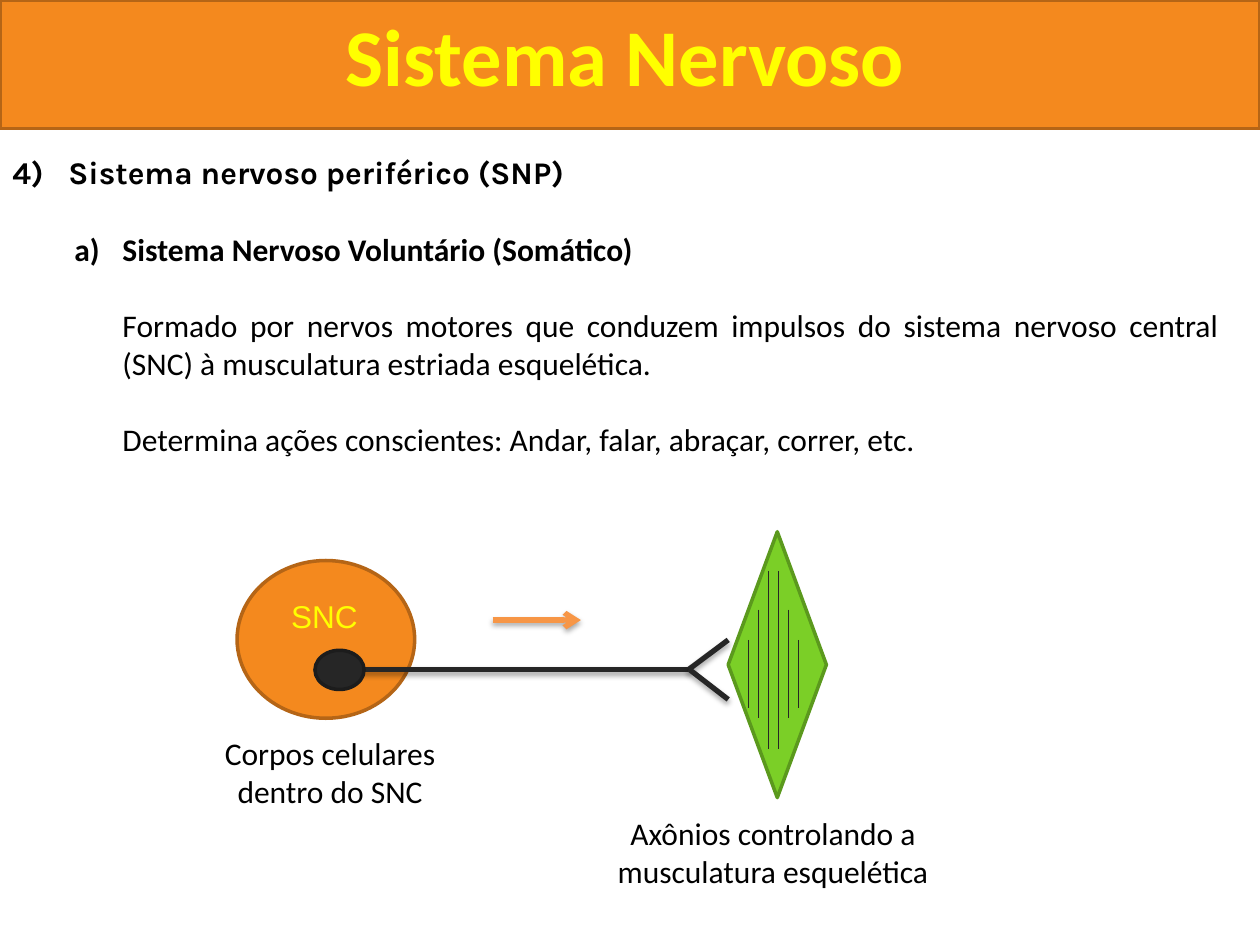
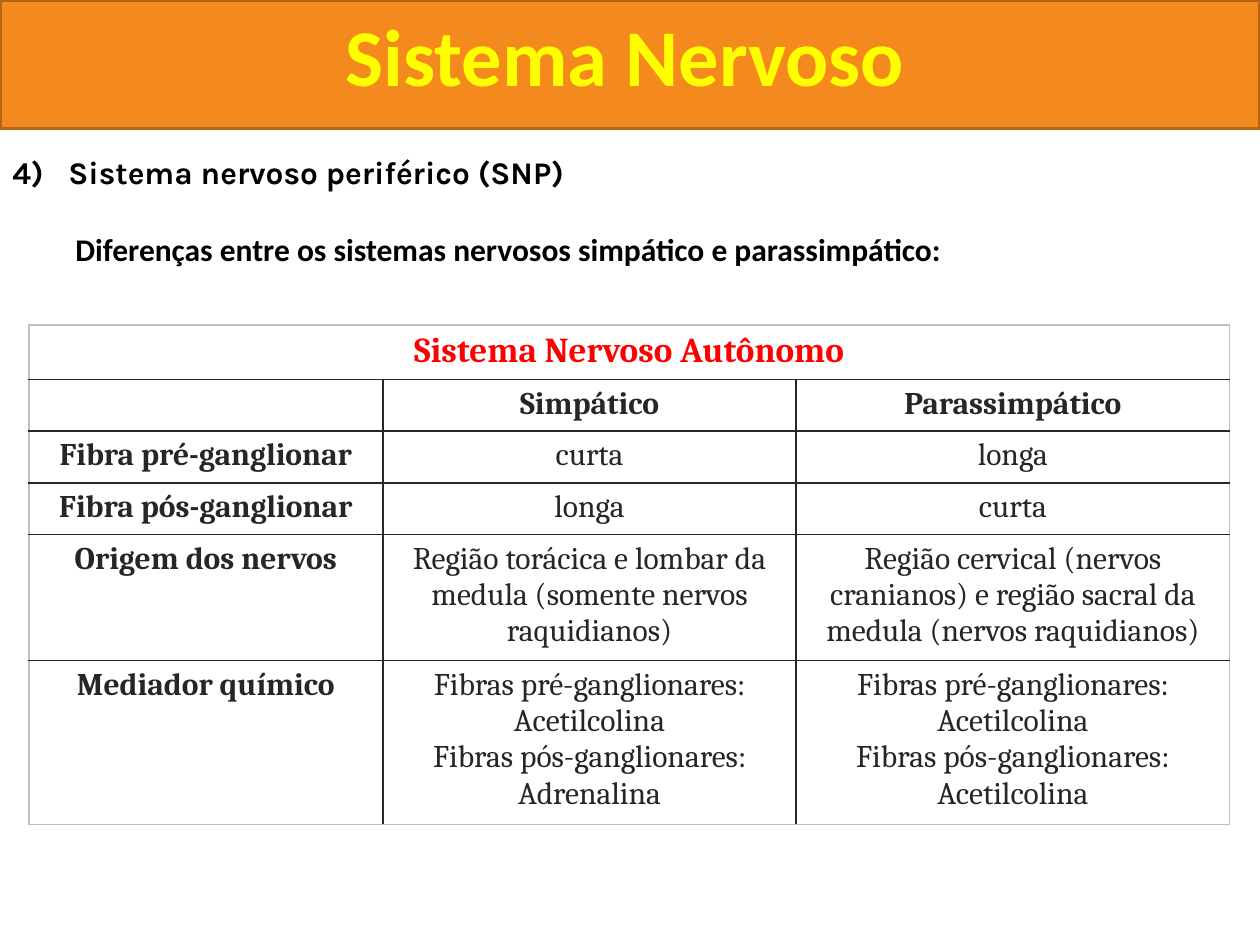
from dataclasses import dataclass

from lxml import etree
from pptx import Presentation
from pptx.dml.color import RGBColor
from pptx.enum.shapes import MSO_CONNECTOR, MSO_SHAPE
from pptx.enum.text import PP_ALIGN
from pptx.oxml.ns import qn
from pptx.util import Cm, Pt

RECT, OVAL = MSO_SHAPE.RECTANGLE, MSO_SHAPE.OVAL
DIAMOND = MSO_SHAPE.FLOWCHART_DECISION
LINE = MSO_CONNECTOR.STRAIGHT
MID, JUST = PP_ALIGN.CENTER, PP_ALIGN.JUSTIFY


@dataclass(frozen=True)
class Theme:
    orange: str = "F4891E"
    rust: str = "B56516"
    yellow: str = "FFFF00"
    green: str = "7BCF27"
    leaf: str = "5B991D"
    amber: str = "F79646"
    dark: str = "262626"
    coal: str = "1C1C1C"
    gray: str = "BFBFBF"
    red: str = "FF0000"
    black: str = "000000"
    white: str = "FFFFFF"
    title: float = 46
    head: float = 20
    text: float = 18
    gap: float = 22
    sans: str = "Calibri"
    topic: str = "Karla"
    label: str = "Arial"
    serif: str = "Cambria"


def rgb(code):
    return RGBColor.from_string(code)


def node(parent, tag, **attrs):
    item = etree.SubElement(parent, qn("a:" + tag))
    for key, value in attrs.items():
        item.set(key, str(value))
    return item


class Deck:
    def __init__(self, theme):
        self.theme = theme
        self.prs = Presentation()
        self.prs.slide_width, self.prs.slide_height = Cm(25.4), Cm(19.05)
        self.slide = None

    def page(self):
        """Start a slide with the title band."""
        t = self.theme
        self.slide = self.prs.slides.add_slide(self.prs.slide_layouts[6])
        self.shape(RECT, (0, 0, 25.4, 2.59), t.orange, t.rust)
        self.note((0.99, 0, 23.22, 2.31), "Sistema Nervoso",
                  size=t.title, color=t.yellow, bold=True)

    def shape(self, kind, box, fill, edge):
        item = self.slide.shapes.add_shape(kind, *map(Cm, box))
        item.shadow.inherit = False
        item.fill.solid()
        item.fill.fore_color.rgb = rgb(fill)
        item.line.color.rgb = rgb(edge)
        item.line.width = Pt(2)

    def run(self, para, text, font=None, size=None, color=None, bold=False):
        t = self.theme
        run = para.add_run()
        run.text = text
        run.font.name = font or t.sans
        run.font.size = Pt(size or t.text)
        run.font.color.rgb = rgb(color or t.black)
        run.font.bold = bold

    def frame(self, box):
        frame = self.slide.shapes.add_textbox(*map(Cm, box)).text_frame
        frame.word_wrap = True
        return frame

    def note(self, box, text, **style):
        para = self.frame(box).paragraphs[0]
        para.alignment = MID
        self.run(para, text, **style)

    def body(self, box, items):
        """Topic heading, then items of (text, left, number, bold)."""
        t = self.theme
        frame = self.frame(box)
        topic = (" Sistema nervoso periférico (SNP)", 0.97,
                 {"type": "arabicParenR", "startAt": 4}, True)
        for i, (text, left, number, bold) in enumerate([topic, *items]):
            para = frame.add_paragraph() if i else frame.paragraphs[0]
            para.alignment = JUST
            props = para._p.get_or_add_pPr()
            props.set("marL", str(Cm(left)))
            props.set("indent", str(Cm(-0.97) if number else 0))
            if number:
                node(props, "buAutoNum", **number)
            else:
                node(props, "buNone")
            if i:
                para.space_before = Pt(t.gap)
            self.run(para, text, font=None if i else t.topic, bold=bold)

    def line(self, start, end, color, width=3, shade=True, arrow=False):
        item = self.slide.shapes.add_connector(LINE, *map(Cm, start + end))
        item.line.color.rgb = rgb(color)
        item.line.width = Pt(width)
        if arrow:
            node(item.line._ln, "tailEnd", type="arrow")
        effect = node(item._element.spPr, "effectLst")
        if shade:
            drop = node(effect, "outerShdw", blurRad=Pt(3.1), dist=Pt(1.8),
                        dir=90 * 60000, rotWithShape=0)
            tint = node(drop, "srgbClr", val=self.theme.black)
            node(tint, "alpha", val=35000)

    def edges(self, cell, outer):
        """Draw cell borders; outer tells which sides of L, R, T, B are rim."""
        props = cell._tc.get_or_add_tcPr()
        for side in "LRTB":
            edge = node(props, "ln" + side, w=Pt(1))
            color = self.theme.gray if side in outer else self.theme.dark
            node(node(edge, "solidFill"), "srgbClr", val=color)

    def table(self, spot, cols, rows, data):
        t = self.theme
        size = (sum(cols), sum(rows))
        grid = self.slide.shapes.add_table(
            len(rows), len(cols), *map(Cm, spot + size)).table
        for col, width in zip(grid.columns, cols):
            col.width = Cm(width)
        for row, height in zip(grid.rows, rows):
            row.height = Cm(height)
        grid.cell(0, 0).merge(grid.cell(0, len(cols) - 1))
        for r, texts in enumerate(data):
            for c in range(len(cols)):
                cell = grid.cell(r, c)
                rim = {"L": c == 0 or r == 0, "T": r == 0,
                       "R": c == len(cols) - 1 or r == 0,
                       "B": r == len(rows) - 1}
                self.edges(cell, [side for side in rim if rim[side]])
                cell.fill.solid()
                cell.fill.fore_color.rgb = rgb(t.white)
                if c >= len(texts) or not texts[c]:
                    continue
                for i, text in enumerate(texts[c].split("\n")):
                    frame = cell.text_frame
                    para = frame.add_paragraph() if i else frame.paragraphs[0]
                    para.alignment = MID
                    self.run(para, text, font=t.serif,
                             size=t.text if r else t.head,
                             color=t.dark if r else t.red,
                             bold=r < 2 or c == 0)


def somatic(deck):
    t = deck.theme
    deck.page()
    deck.body((0, 2.97, 24.82, 13.33), [
        ("Sistema Nervoso Voluntário (Somático)", 2.22,
         {"type": "alphaLcParenR"}, True),
        ("Formado por nervos motores que conduzem impulsos do sistema "
         "nervoso central (SNC) à musculatura estriada esquelética.",
         2.22, None, False),
        ("Determina ações conscientes: Andar, falar, abraçar, correr, etc.",
         2.22, None, False),
    ])

    # Nerve cell and its axon
    deck.shape(OVAL, (4.78, 11.3, 3.58, 3.18), t.orange, t.rust)
    deck.note((4.95, 11.91, 3.18, 1.02), "SNC", font=t.label, color=t.yellow)
    fork = (13.89, 13.49)
    deck.line((6.76, 13.49), fork, t.dark)
    deck.shape(OVAL, (6.35, 13.11, 0.99, 0.79), t.dark, t.coal)
    for tip in (12.9, 14.1):
        deck.line(fork, (14.68, tip), t.dark)
    deck.line((9.93, 12.5), (11.71, 12.5), t.amber, arrow=True)

    # Muscle with its fibres
    deck.shape(DIAMOND, (14.68, 10.72, 1.98, 5.36), t.green, t.leaf)
    half = [(12.9, 14.27), (12.29, 14.48), (11.51, 15.09)]
    for i, (top, foot) in enumerate(half + half[::-1]):
        x = 15.09 + 0.2 * i
        deck.line((x, top), (x, foot), t.dark, width=0.75, shade=False)

    # Captions
    deck.note((3.58, 14.68, 6.15, 1.8), "Corpos celulares dentro do SNC")
    deck.note((12.12, 16.28, 6.93, 1.8),
              "Axônios controlando a musculatura esquelética")


def compare(deck):
    deck.page()
    deck.body((0, 2.97, 25.4, 3.33), [
        ("Diferenças entre os sistemas nervosos simpático e "
         "parassimpático:", 1.27, None, True),
    ])
    deck.table((0.58, 6.55), (7.14, 8.33, 8.74),
               (1.09, 1.04, 1.04, 1.04, 2.54, 3.3), [
        ["Sistema Nervoso Autônomo"],
        ["", "Simpático", "Parassimpático"],
        ["Fibra pré-ganglionar", "curta", "longa"],
        ["Fibra pós-ganglionar", "longa", "curta"],
        ["Origem dos nervos",
         "Região torácica e lombar da medula (somente nervos raquidianos)",
         "Região cervical (nervos cranianos) e região sacral da medula "
         "(nervos raquidianos)"],
        ["Mediador químico",
         "Fibras pré-ganglionares: Acetilcolina\n"
         "Fibras pós-ganglionares: Adrenalina",
         "Fibras pré-ganglionares: Acetilcolina\n"
         "Fibras pós-ganglionares:\nAcetilcolina"],
    ])


def main():
    deck = Deck(Theme())
    somatic(deck)
    compare(deck)
    deck.prs.save("out.pptx")


if __name__ == "__main__":
    main()
